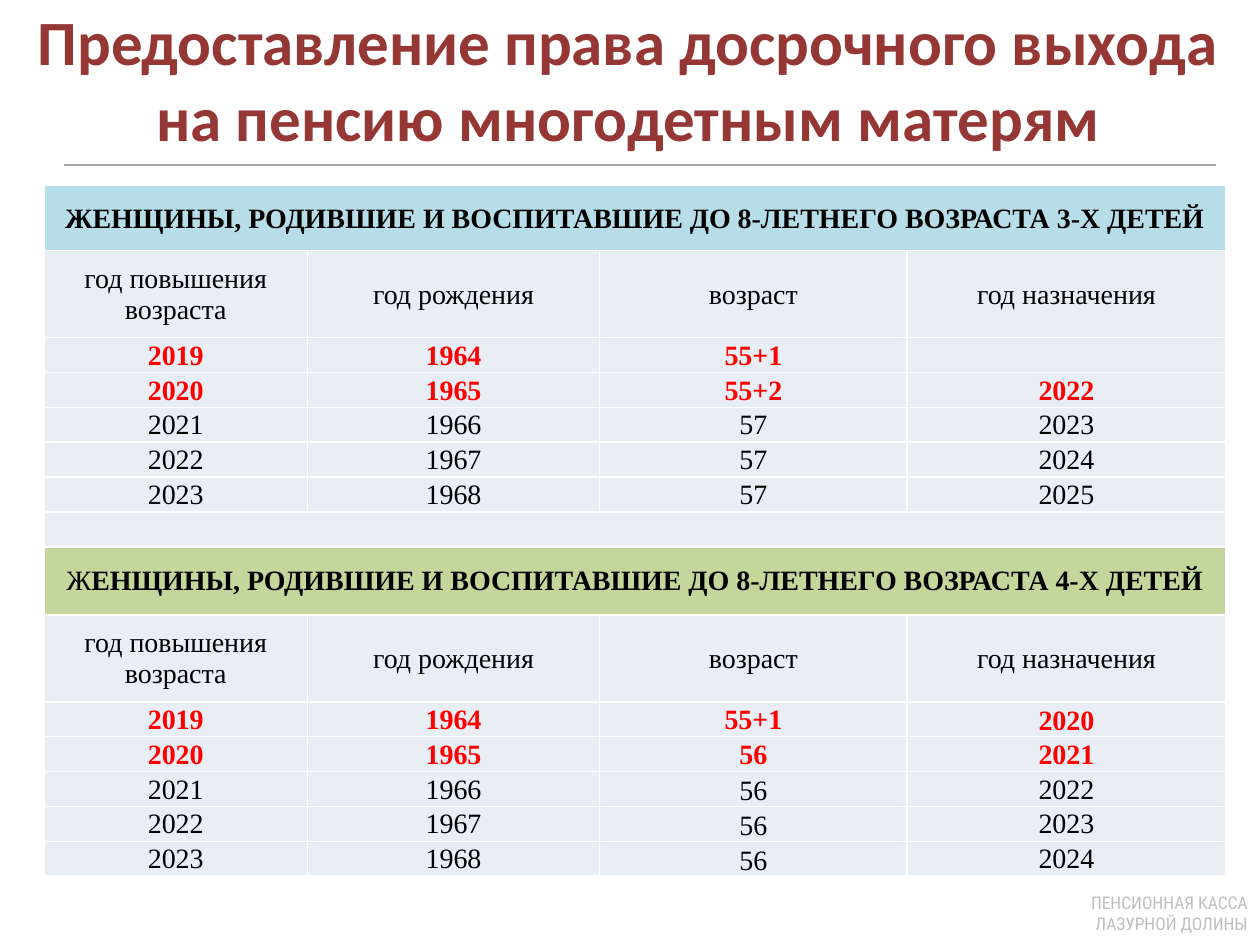
from dataclasses import dataclass

from lxml.etree import SubElement
from pptx import Presentation
from pptx.dml.color import RGBColor
from pptx.enum.shapes import MSO_CONNECTOR
from pptx.enum.text import MSO_ANCHOR, PP_ALIGN
from pptx.oxml import parse_xml
from pptx.oxml.ns import nsdecls, qn
from pptx.util import Inches, Pt


@dataclass(frozen=True)
class Theme:
    """Colours, fonts and type sizes of the slide."""

    title: str = "953735"
    rule: str = "A6A6A6"
    footer: str = "BFBFBF"
    text: str = "000000"
    accent: str = "FF0000"
    cell: str = "E9EDF4"
    three_children: str = "B7DEE8"
    four_children: str = "C3D69B"
    border: str = "FFFFFF"
    title_face: str = "Calibri"
    footer_face: str = "Roboto Condensed"
    table_face: str = "Times New Roman"
    title_size: int = 36
    footer_size: int = 10
    table_size: int = 16


THEME = Theme()
COLUMN_WIDTHS = (2.09, 2.32, 2.44, 2.53)
HEADINGS = ("год повышения возраста", "год рождения", "возраст", "год назначения")
HEADING_HEIGHT = 0.69
GROUPS = (
    {
        "caption": (("ЖЕНЩИНЫ, РОДИВШИЕ И ВОСПИТАВШИЕ ДО 8-ЛЕТНЕГО ВОЗРАСТА 3-Х ДЕТЕЙ", True),),
        "fill": THEME.three_children,
        "height": 0.52,
        "ages": ("55+1", "55+2", "57", "57", "57"),
        "pension_years": ("", "2022", "2023", "2024", "2025"),
        "low_cells": (),
    },
    {
        "caption": (
            ("Ж", False),
            ("ЕНЩИНЫ, РОДИВШИЕ И ВОСПИТАВШИЕ ДО 8-ЛЕТНЕГО ВОЗРАСТА 4-Х ДЕТЕЙ", True),
        ),
        "fill": THEME.four_children,
        "height": 0.54,
        "ages": ("55+1", "56", "56", "56", "56"),
        "pension_years": ("2020", "2021", "2022", "2023", "2024"),
        "low_cells": ((0, 3), (2, 2), (3, 2), (4, 2)),
    },
)


def apply_format(target, values):
    """Set every attribute named in values on target."""
    for name, value in values.items():
        setattr(target, name, value)


def write_runs(paragraph, runs, face, size, color, align):
    """Fill a paragraph with (wording, bold) runs in one style."""
    paragraph.alignment = align
    for wording, bold in runs:
        run = paragraph.add_run()
        run.text = wording
        apply_format(run.font, {"name": face, "size": Pt(size), "bold": bold})
        run.font.color.rgb = RGBColor.from_string(color)


def add_label(slide, box, runs, face, size, color, align):
    """Place wrapped text in the given box."""
    frame = slide.shapes.add_textbox(*map(Inches, box)).text_frame
    frame.word_wrap = True
    write_runs(frame.paragraphs[0], runs, face, size, color, align)


def add_rule(slide, left, top, width):
    """Draw the horizontal rule under the title."""
    rule = slide.shapes.add_connector(
        MSO_CONNECTOR.STRAIGHT, Inches(left), Inches(top), Inches(left + width), Inches(top)
    )
    rule.line.width = Pt(1.5)
    rule.line.color.rgb = RGBColor.from_string(THEME.rule)
    SubElement(rule._element.spPr, qn("a:effectLst"))


def style_cell(cell, fill):
    """Give a cell its fill, insets and white borders."""
    inset = Inches(0.01)
    apply_format(cell, {
        "margin_left": inset, "margin_right": inset, "margin_top": inset,
        "margin_bottom": 0, "vertical_anchor": MSO_ANCHOR.MIDDLE,
    })
    cell.fill.solid()
    cell.fill.fore_color.rgb = RGBColor.from_string(fill)
    properties = cell._tc.get_or_add_tcPr()
    for index, side in enumerate("LRTB"):
        properties.insert(index, parse_xml(
            f'<a:ln{side} {nsdecls("a")} w="{Pt(1)}"><a:solidFill>'
            f'<a:srgbClr val="{THEME.border}"/></a:solidFill></a:ln{side}>'
        ))


def fill_cell(cell, runs, color=THEME.text):
    """Write centred table text, keeping the type size in an empty cell."""
    paragraph = cell.text_frame.paragraphs[0]
    if runs:
        write_runs(paragraph, runs, THEME.table_face, THEME.table_size, color, PP_ALIGN.CENTER)
    else:
        SubElement(paragraph._p, qn("a:endParaRPr"), sz=str(THEME.table_size * 100))


def add_group(table, first_row, group):
    """Fill one caption, heading and year block from first_row down."""
    caption = table.cell(first_row, 0)
    caption.merge(table.cell(first_row, len(HEADINGS) - 1))
    for column in range(len(HEADINGS)):
        style_cell(table.cell(first_row, column), group["fill"])
    fill_cell(caption, group["caption"])
    table.rows[first_row].height = Inches(group["height"])
    table.rows[first_row + 1].height = Inches(HEADING_HEIGHT)
    for column, heading in enumerate(HEADINGS):
        cell = table.cell(first_row + 1, column)
        style_cell(cell, THEME.cell)
        fill_cell(cell, ((heading, False),))
    for index, (age, pension_year) in enumerate(zip(group["ages"], group["pension_years"])):
        early = index < 2
        values = (str(2019 + index), str(1964 + index), age, pension_year)
        for column, value in enumerate(values):
            cell = table.cell(first_row + 2 + index, column)
            style_cell(cell, THEME.cell)
            fill_cell(cell, ((value, early),) if value else (), THEME.accent if early else THEME.text)
            if (index, column) in group["low_cells"]:
                cell.vertical_anchor = MSO_ANCHOR.BOTTOM


def add_pension_table(slide, box):
    """Place both family groups in one table with a gap row between them."""
    block_rows = [2 + len(group["ages"]) for group in GROUPS]
    row_count = sum(block_rows) + 1
    table = slide.shapes.add_table(row_count, len(HEADINGS), *map(Inches, box)).table
    apply_format(table, {"first_row": False, "horz_banding": False})
    for column, width in zip(table.columns, COLUMN_WIDTHS):
        column.width = Inches(width)
    tall_height = sum(group["height"] + HEADING_HEIGHT for group in GROUPS)
    for row in table.rows:
        row.height = Inches((box[3] - tall_height) / (row_count - 2 * len(GROUPS)))
    gap_row = block_rows[0]
    for first_row, group in zip((0, gap_row + 1), GROUPS):
        add_group(table, first_row, group)
    table.cell(gap_row, 0).merge(table.cell(gap_row, len(HEADINGS) - 1))
    for column in range(len(HEADINGS)):
        style_cell(table.cell(gap_row, column), THEME.cell)
        fill_cell(table.cell(gap_row, column), ())


def main():
    """Build and save the slide."""
    presentation = Presentation()
    apply_format(presentation, {"slide_width": Inches(10), "slide_height": Inches(7.5)})
    slide = presentation.slides.add_slide(presentation.slide_layouts[6])
    add_rule(slide, 0.51, 1.31, 9.14)
    add_label(
        slide, (8.19, 7.03, 1.81, 0.44), (("ПЕНСИОННАЯ КАССА ЛАЗУРНОЙ ДОЛИНЫ", False),),
        THEME.footer_face, THEME.footer_size, THEME.footer, PP_ALIGN.RIGHT,
    )
    add_label(
        slide, (-0.03, -0.03, 10.03, 1.31),
        (("Предоставление права досрочного выхода на пенсию многодетным матерям", True),),
        THEME.title_face, THEME.title_size, THEME.title, PP_ALIGN.CENTER,
    )
    add_pension_table(slide, (0.35, 1.47, 9.37, 5.46))
    presentation.save("out.pptx")


if __name__ == "__main__":
    main()
